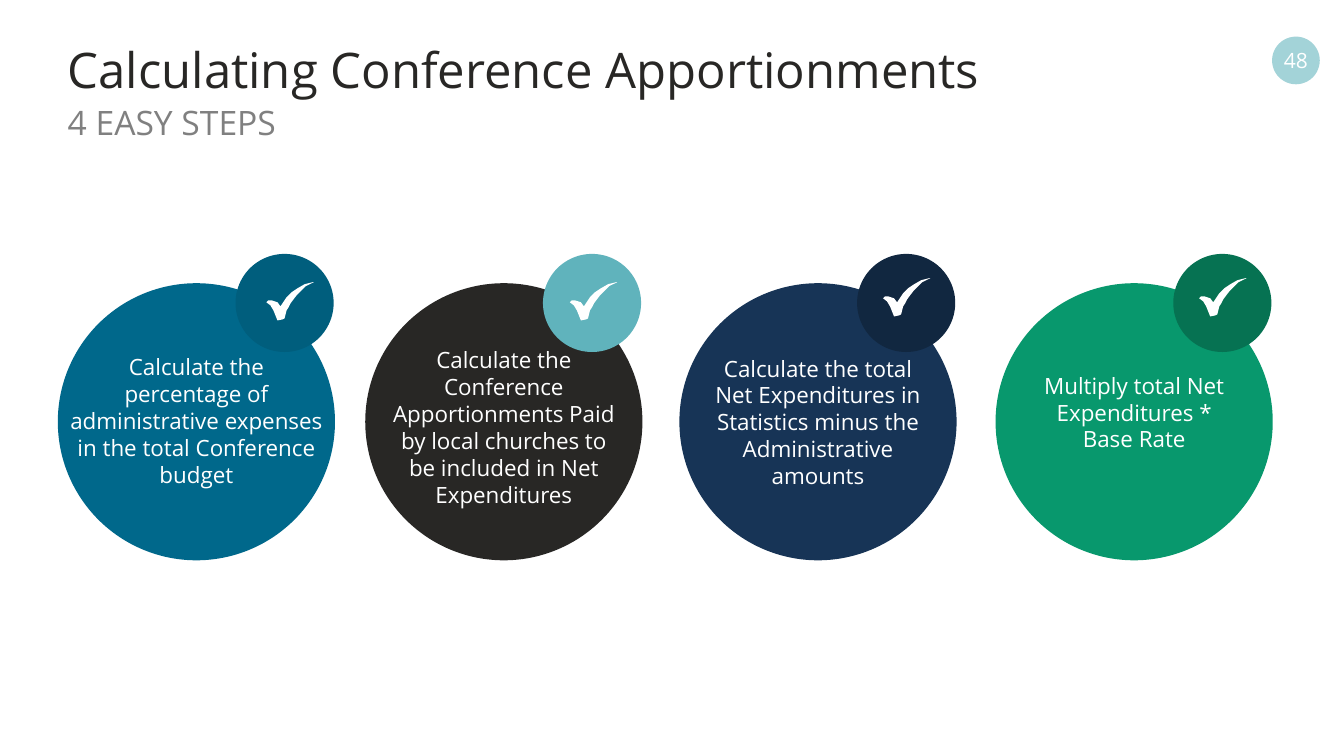
from dataclasses import dataclass

from pptx import Presentation
from pptx.dml.color import RGBColor
from pptx.enum.shapes import MSO_SHAPE
from pptx.enum.text import MSO_ANCHOR, PP_ALIGN
from pptx.util import Inches, Pt

WIDTH, HEIGHT = Inches(13.33), Inches(7.5)
COLUMNS = 40
CELL = WIDTH / COLUMNS


@dataclass(frozen=True)
class Theme:
    font: str = "Open Sans"
    title_size: int = 35
    subtitle_size: int = 24
    step_size: int = 16
    number_size: int = 15
    ink: str = "282725"
    muted: str = "808080"
    light: str = "FFFFFF"
    number_fill: str = "A3D3D8"
    steps: tuple = (("00688B", "005E7D"), ("282725", "60B3BC"),
                    ("173456", "112740"), ("08986D", "067252"))


THEME = Theme()

DISC, DISC_TOP = 8.25, 8.43
BADGE, BADGE_TOP, BADGE_SHIFT = 2.92, 7.56, 5.29
LINE_ROWS, INSET_ROWS = 0.81, 0.3

# Tick outline in hundredths of an inch
TICK = ((0, 19.5), (2, 18), (5, 17.5), (8, 19), (11, 20.5), (14, 24.5),
        (16, 21), (20, 15), (25, 10), (31, 5.5), (38, 2), (46, 0), (47, 0),
        (39, 4.5), (34, 9), (30, 13), (27, 17), (24, 21), (22, 25), (20, 28),
        (18, 36), (16, 37), (11, 38.5), (9, 33), (7, 28), (4, 23), (0, 20))

# Disc left, label top, label width, label lines, tick shift, tick top, text
STEPS = (
    (1.72, 10.38, 8.25, 5, 6.21, 8.4,
     "Calculate the percentage of administrative expenses in the total Conference budget"),
    (10.87, 10.17, 7.32, 6, 6.09, 8.4,
     "Calculate the Conference Apportionments Paid by local churches to be included in Net Expenditures"),
    (20.22, 10.41, 6.78, 5, 6.06, 8.28,
     "Calculate the total Net Expenditures in Statistics minus the Administrative amounts"),
    (29.63, 10.92, 6.78, 3, 6.06, 8.28,
     "Multiply total Net Expenditures * Base Rate"),
)


def cells(*counts):
    return [round(n * CELL) for n in counts]


def paint(sp, color):
    sp.fill.solid()
    sp.fill.fore_color.rgb = RGBColor.from_string(color)
    sp.line.fill.background()
    sp.shadow.inherit = False


def add_circle(slide, left, top, size, color):
    sp = slide.shapes.add_shape(MSO_SHAPE.OVAL, *cells(left, top, size, size))
    paint(sp, color)


def add_tick(slide, left, top):
    builder = slide.shapes.build_freeform(*TICK[0], scale=Inches(0.01))
    builder.add_line_segments(TICK[1:], close=True)
    paint(builder.convert_to_shape(*cells(left, top)), THEME.light)


def add_text(slide, text, box, *, size, color, align=PP_ALIGN.LEFT,
             anchor=MSO_ANCHOR.TOP, spacing=1.0):
    tf = slide.shapes.add_textbox(*cells(*box)).text_frame
    tf.word_wrap = True
    tf.vertical_anchor = anchor
    p = tf.paragraphs[0]
    p.alignment, p.line_spacing = align, spacing
    r = p.add_run()
    r.text = text
    r.font.name, r.font.size = THEME.font, Pt(size)
    r.font.color.rgb = RGBColor.from_string(color)


def add_heading(slide):
    add_text(slide, "Calculating Conference Apportionments", (1.72, 1.17, 34.5, 1.98),
             size=THEME.title_size, color=THEME.ink,
             anchor=MSO_ANCHOR.MIDDLE, spacing=0.9)
    add_text(slide, "4 EASY STEPS", (1.72, 2.88, 35.07, 1.5),
             size=THEME.subtitle_size, color=THEME.muted)


def add_page_number(slide):
    add_circle(slide, 37.86, 1.09, 1.42, THEME.number_fill)
    add_text(slide, "48", (37.77, 1.35, 1.6, 0.9), size=THEME.number_size,
             color=THEME.light, align=PP_ALIGN.CENTER, anchor=MSO_ANCHOR.MIDDLE)


def add_step(slide, step, colors):
    left, label_top, label_width, lines, tick_shift, tick_top, text = step
    disc_color, badge_color = colors
    add_circle(slide, left, DISC_TOP, DISC, disc_color)
    add_circle(slide, left + BADGE_SHIFT, BADGE_TOP, BADGE, badge_color)
    label_left = left + (DISC - label_width) / 2
    add_text(slide, text,
             (label_left, label_top, label_width, INSET_ROWS + lines * LINE_ROWS),
             size=THEME.step_size, color=THEME.light, align=PP_ALIGN.CENTER)
    add_tick(slide, left + tick_shift, tick_top)


def main():
    prs = Presentation()
    prs.slide_width, prs.slide_height = WIDTH, HEIGHT
    slide = prs.slides.add_slide(prs.slide_layouts[6])
    add_page_number(slide)
    add_heading(slide)
    for step, colors in zip(STEPS, THEME.steps):
        add_step(slide, step, colors)
    prs.save("out.pptx")


if __name__ == "__main__":
    main()
